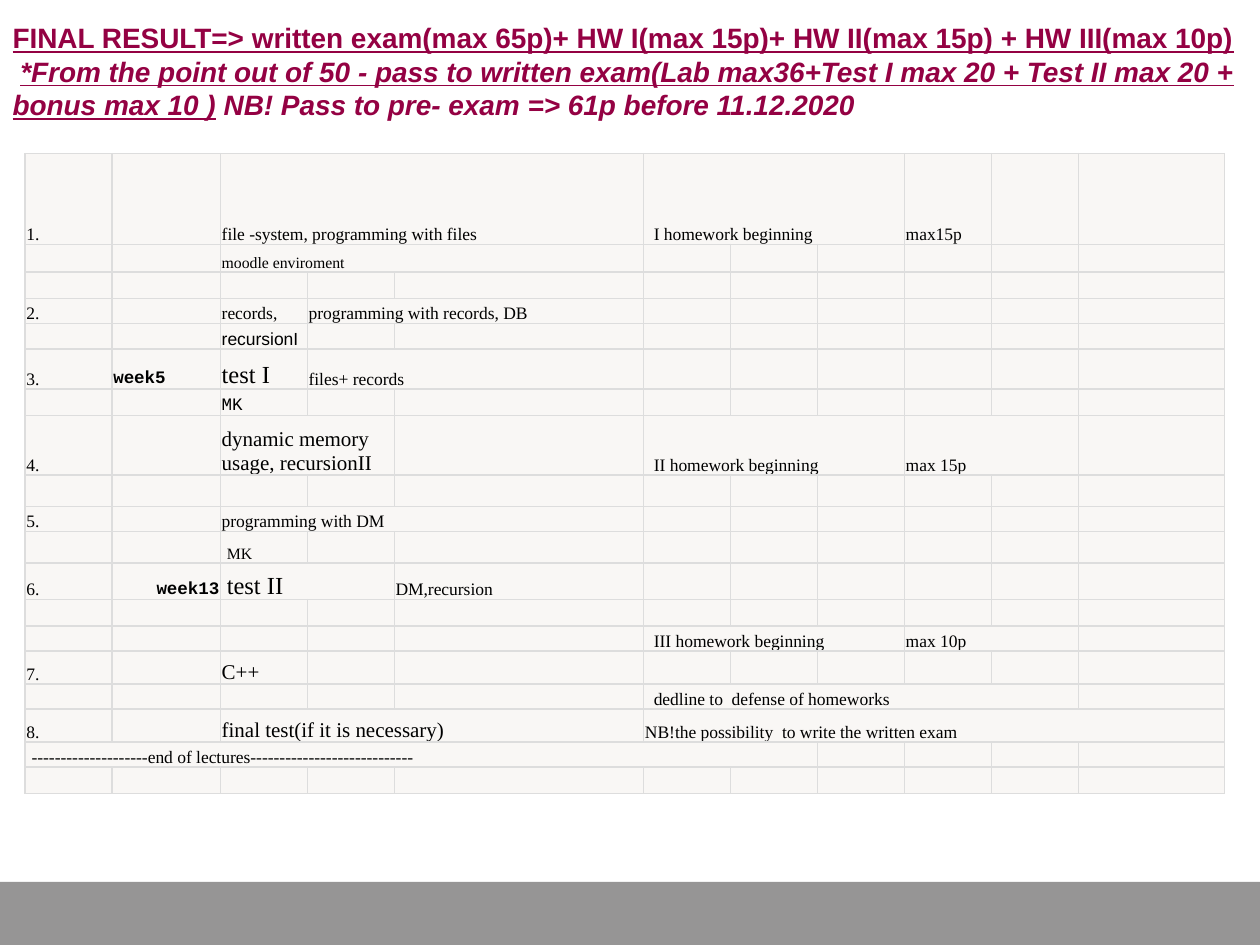
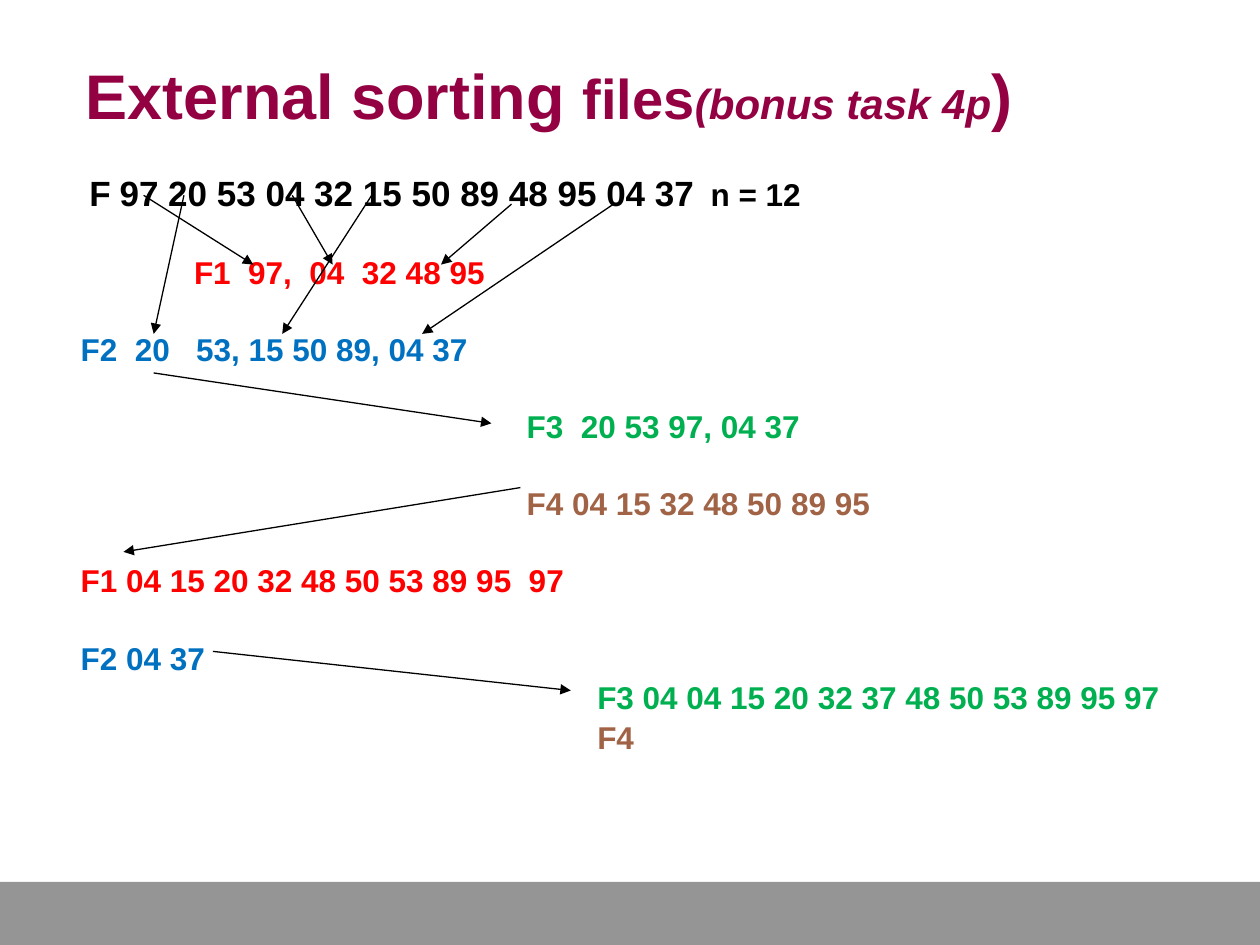
from lxml import etree
from pptx import Presentation
from pptx.dml.color import RGBColor
from pptx.enum.shapes import MSO_CONNECTOR, MSO_SHAPE
from pptx.enum.text import MSO_ANCHOR, MSO_AUTO_SIZE, PP_ALIGN
from pptx.oxml.ns import qn
from pptx.util import Inches, Pt

STRAIGHT = MSO_CONNECTOR.STRAIGHT
RECTANGLE = MSO_SHAPE.RECTANGLE
MIDDLE, BOTTOM = MSO_ANCHOR.MIDDLE, MSO_ANCHOR.BOTTOM
NO_AUTOFIT = MSO_AUTO_SIZE.NONE
LEFT, RIGHT = PP_ALIGN.LEFT, PP_ALIGN.RIGHT

SANS, SERIF, MONO = "Arial", "Times New Roman", "Courier New"
COLORS = {
    "title": "940143", "band": "969595", "text": "000000",
    "cell": "F9F7F5", "border": "DDDDDD",
    "F1": "FF0000", "F2": "0070C0", "F3": "00B050", "F4": "A16346",
}
TITLE_ONLY, TITLE_AND_BODY = 5, 1


def color(name):
    return RGBColor.from_string(COLORS[name])


class Deck:
    """Holds the shared style and the current slide."""

    def __init__(self):
        self.presentation = Presentation()
        self.presentation.slide_width = Inches(10)
        self.presentation.slide_height = Inches(7.5)
        self.slide = None

    def add_slide(self, layout):
        layouts = self.presentation.slide_layouts
        self.slide = self.presentation.slides.add_slide(layouts[layout])
        band = self.slide.shapes.add_shape(
            RECTANGLE, 0, Inches(7), Inches(10), Inches(0.5))
        band.shadow.inherit = False
        band.fill.solid()
        band.fill.fore_color.rgb = color("band")
        band.line.fill.background()

    def place(self, shape, left, top, width, height):
        shape.left, shape.top = Inches(left), Inches(top)
        shape.width, shape.height = Inches(width), Inches(height)
        shape.text_frame.word_wrap = True
        shape.text_frame.auto_size = NO_AUTOFIT
        return shape.text_frame

    def format_run(self, run, size, color_name, font=SANS, bold=True,
                   italic=False, underline=False):
        run.font.name, run.font.size = font, Pt(size)
        run.font.bold, run.font.italic = bold, italic
        run.font.underline = underline
        run.font.color.rgb = color(color_name)

    def add_runs(self, paragraph, runs, color_name):
        """Each run is (text, size, further format)."""
        for text, size, style in runs:
            run = paragraph.add_run()
            run.text = text
            self.format_run(run, size, color_name, **style)

    def title(self, box, lines):
        text_frame = self.place(self.slide.shapes.title, *box)
        text_frame.vertical_anchor = MIDDLE
        for index, runs in enumerate(lines):
            paragraph = (text_frame.add_paragraph() if index
                         else text_frame.paragraphs[0])
            paragraph.alignment = LEFT
            paragraph.space_before = Pt(0)
            self.add_runs(paragraph, runs, "title")

    def body(self, box, lines):
        """Each line is (indent, space before, tab stop, colour, runs)."""
        text_frame = self.place(self.slide.placeholders[1], *box)
        for index, (indent, space, tab, color_name, runs) in enumerate(lines):
            paragraph = (text_frame.add_paragraph() if index
                         else text_frame.paragraphs[0])
            properties = paragraph._p.get_or_add_pPr()
            properties.set("marL", str(Inches(indent)))
            properties.set("indent", "0")
            etree.SubElement(properties, qn("a:buNone"))
            if tab:
                tabs = etree.SubElement(properties, qn("a:tabLst"))
                etree.SubElement(tabs, qn("a:tab"), pos=str(Inches(tab)), algn="l")
            paragraph.space_before = Pt(space)
            self.add_runs(paragraph, runs, color_name)

    def arrow(self, start, end):
        connector = self.slide.shapes.add_connector(
            STRAIGHT, *(Inches(value) for value in start + end))
        connector.line.color.rgb = color("text")
        connector.line.width = Pt(0.75)
        line = connector.line._get_or_add_ln()
        etree.SubElement(line, qn("a:tailEnd"), type="triangle")
        etree.SubElement(connector._element.spPr, qn("a:effectLst"))

    def style_cell(self, cell):
        cell.margin_left = cell.margin_right = cell.margin_top = Inches(0.01)
        cell.margin_bottom = 0
        cell.vertical_anchor = BOTTOM
        properties = cell._tc.get_or_add_tcPr()
        for side in ("a:lnL", "a:lnR", "a:lnT", "a:lnB"):
            line = etree.SubElement(properties, qn(side), w=str(Pt(1)))
            fill = etree.SubElement(line, qn("a:solidFill"))
            etree.SubElement(fill, qn("a:srgbClr"), val=COLORS["border"])
        cell.fill.solid()
        cell.fill.fore_color.rgb = color("cell")

    def table(self, left, top, widths, heights, entries):
        """Entries map (row, column) to (text, size, columns spanned, format)."""
        table = self.slide.shapes.add_table(
            len(heights), len(widths), Inches(left), Inches(top),
            Inches(sum(widths)), Inches(sum(heights))).table
        table.first_row = table.horz_banding = False
        for column, width in zip(table.columns, widths):
            column.width = Inches(width)
        for row, height in zip(table.rows, heights):
            row.height = Inches(height)
        for row in range(len(heights)):
            for column in range(len(widths)):
                cell = table.cell(row, column)
                self.style_cell(cell)
                paragraph = cell.text_frame.paragraphs[0]
                if (row, column) not in entries:
                    etree.SubElement(paragraph._p, qn("a:endParaRPr"), sz="900")
                    continue
                text, size, span, style = entries[row, column]
                style = {"font": SERIF, "bold": False, **style}
                cell.margin_left = Inches(style.pop("indent", 0.01))
                paragraph.alignment = style.pop("align", LEFT)
                paragraph.text = text
                self.format_run(paragraph.runs[0], size, "text", **style)
        for (row, column), (_, _, span, _) in entries.items():
            if span > 1:
                table.cell(row, column).merge(table.cell(row, column + span - 1))


def build_schedule(deck):
    deck.add_slide(TITLE_ONLY)
    underlined = {"underline": True}
    slanted = {"italic": True}
    deck.title((0, 0.13, 10, 0.87), [
        [("FINAL RESULT=> written exam(max 65p)+ HW I(max 15p)+ HW II(max 15p)"
          " + HW III(max 10p)", 16, underlined)],
        [(" ", 16, {}),
         ("*From the point out of 50 - pass to written exam(Lab max36+Test I max 20"
          " + Test II max 20 + bonus max 10 )", 16, {**slanted, **underlined}),
         (" ", 16, {}),
         ("NB! Pass to pre- exam => 61p before 11.12.2020", 16, slanted)],
    ])

    # Lecture plan: number, week, topics, homework, points
    widths = [0.69, 0.86, 0.69, 0.69, 1.98] + [0.69] * 5 + [1.16]
    heights = [0.72, 0.22, 0.21, 0.2, 0.2, 0.32, 0.21, 0.47, 0.25, 0.2,
               0.25, 0.29, 0.21, 0.2, 0.26, 0.2, 0.26, 0.2, 0.21]
    week = {"font": MONO, "bold": True}
    homework = {"indent": 0.08}
    shifted = {"indent": 0.05}
    entries = {
        (0, 2): ("file -system, programming with files", 10, 3, {}),
        (0, 5): ("I homework beginning", 10, 3, homework),
        (0, 8): ("max15p", 10, 1, {}),
        (1, 2): ("moodle enviroment", 9, 3, {}),
        (3, 2): ("records,", 10, 1, {}),
        (3, 3): ("programming with records, DB", 10, 2, {}),
        (4, 2): ("recursionI", 10, 1, {"font": SANS}),
        (5, 1): ("week5", 10, 1, week),
        (5, 2): ("test I", 14, 1, {}),
        (5, 3): ("files+ records", 10, 2, {}),
        (6, 2): ("MK", 10, 1, {"font": MONO}),
        (7, 2): ("dynamic memory usage, recursionII", 12, 2, {}),
        (7, 5): ("II homework beginning", 10, 3, homework),
        (7, 8): ("max 15p", 10, 2, {}),
        (9, 2): ("programming with DM", 10, 3, {}),
        (10, 2): ("MK", 9, 1, shifted),
        (11, 1): ("week13", 10, 1, {**week, "align": RIGHT}),
        (11, 2): ("test II", 14, 2, shifted),
        (11, 4): ("DM,recursion", 10, 1, {}),
        (13, 5): ("III homework beginning", 10, 3, homework),
        (13, 8): ("max 10p", 10, 2, {}),
        (14, 2): ("C++", 12, 1, {}),
        (15, 5): ("dedline to  defense of homeworks", 10, 5, homework),
        (16, 2): ("final test(if it is necessary)", 12, 3, {}),
        (16, 5): ("NB!the possibility  to write the written exam", 10, 6, {}),
        (17, 0): ("-" * 20 + "end of lectures" + "-" * 28, 10, 7, shifted),
    }
    numbered_rows = (0, 3, 5, 7, 9, 11, 14, 16)
    for number, row in enumerate(numbered_rows, start=1):
        entries[row, 0] = (f"{number}.", 10, 1, {})
    deck.table(0.2, 1.22, widths, heights, entries)


def build_sorting(deck):
    deck.add_slide(TITLE_AND_BODY)
    deck.title((0.58, 0.42, 8.92, 0.66), [[
        ("External sorting ", 36, {}), ("files", 32, {}),
        ("(bonus task 4p", 24, {"italic": True}), (")", 36, {})]])

    # File contents after each pass: indent, space before, text
    passes = [
        (0.9, 22.5, "F1  97,  04  32 48 95"),
        (0, 22.5, "F2  20   53, 15 50 89, 04 37"),
        (3.54, 22.5, "F3  20 53 97, 04 37"),
        (3.54, 22.5, "F4 04 15 32 48 50 89 95"),
        (0, 22.5, "F1 04 15 20 32 48 50 53 89 95  97"),
        (0, 22.5, "F2 04 37"),
        (4.1, 1, "F3 04 04 15 20 32 37 48 50 53 89 95 97"),
        (4.1, 1, "F4"),
    ]
    source = [(" ", 18, {}), ("F", 20, {}), (" ", 18, {}),
              ("97 20 53 04 32 15 50 89 48 95 04 37\t", 20, {}),
              ("n = 12", 18, {})]
    lines = [(0, 0, 5.57, "text", source)]
    lines += [(indent, space, None, text[:2], [(text, 18, {})])
              for indent, space, text in passes]
    deck.body((0.54, 1.31, 8.92, 5.28), lines)

    # Moves of the runs between files
    for start, end in [
        ((1.46, 1.55), (1.22, 2.65)), ((1.14, 1.55), (2.01, 2.1)),
        ((2.32, 1.55), (2.64, 2.1)), ((2.95, 1.55), (2.24, 2.65)),
        ((4.06, 1.62), (3.5, 2.1)), ((4.87, 1.62), (3.35, 2.65)),
        ((1.22, 2.96), (3.9, 3.36)), ((4.13, 3.87), (0.98, 4.38)),
        ((1.69, 5.17), (4.53, 5.48)),
    ]:
        deck.arrow(start, end)


def main():
    deck = Deck()
    build_schedule(deck)
    build_sorting(deck)
    deck.presentation.save("out.pptx")


if __name__ == "__main__":
    main()
